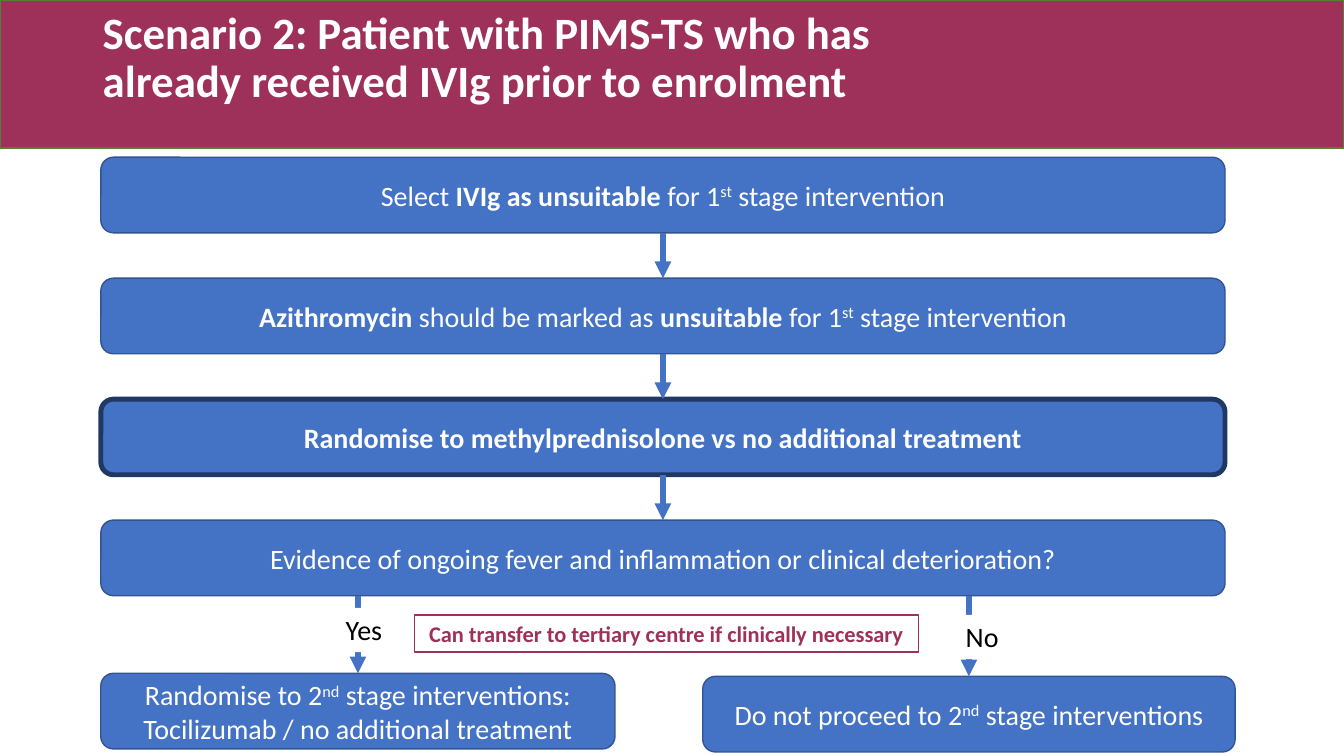
from dataclasses import dataclass
from typing import NamedTuple

from lxml.etree import SubElement
from pptx import Presentation
from pptx.dml.color import RGBColor
from pptx.enum.shapes import MSO_CONNECTOR, MSO_SHAPE
from pptx.enum.text import MSO_ANCHOR, PP_ALIGN
from pptx.oxml.ns import qn
from pptx.util import Inches, Pt

WHITE = RGBColor(0xFF, 0xFF, 0xFF)
BLACK = RGBColor(0x00, 0x00, 0x00)
MAROON = RGBColor(0x9E, 0x31, 0x59)
GREEN = RGBColor(0x53, 0x80, 0x35)
BLUE = RGBColor(0x44, 0x72, 0xC4)
BLUE_EDGE = RGBColor(0x32, 0x54, 0x91)
NAVY = RGBColor(0x20, 0x38, 0x64)

FONT = "Calibri"
STEP_LEFT, STEP_WIDTH, STEP_HEIGHT = 1, 11.15, 0.75
STEP_TOP, STEP_PITCH = 1.56, 1.2
BOTTOM_SIDE, TOP_SIDE = 2, 0


class Span(NamedTuple):
    text: str
    bold: bool = False
    superscript: bool = False


Paragraphs = list[list[Span]]


@dataclass
class Step:
    paragraphs: Paragraphs
    edge: RGBColor = BLUE_EDGE
    edge_width: float = 1


@dataclass
class Outcome:
    answer: str
    answer_left: float
    answer_top: float
    left: float
    top: float
    width: float
    paragraphs: Paragraphs


FIRST_STAGE = [Span("st", superscript=True), Span(" stage intervention")]

STEPS = [
    Step([[Span("Select "), Span("IVIg as unsuitable ", bold=True), Span("for 1"), *FIRST_STAGE]]),
    Step([[Span("Azithromycin", bold=True), Span(" should be marked as "),
           Span("unsuitable", bold=True), Span(" for 1"), *FIRST_STAGE]]),
    Step([[Span("Randomise to methylprednisolone vs no additional treatment", bold=True)]],
         NAVY, 3.5),
    Step([[Span("Evidence of ongoing fever and inflammation or clinical deterioration?")]]),
]

OUTCOMES = [
    Outcome("Yes", 3.33, 6.03, 1, 6.68, 5.1,
            [[Span("Randomise to 2"), Span("nd", superscript=True), Span(" stage interventions:")],
             [Span("Tocilizumab / no additional treatment")]]),
    Outcome("No", 9.48, 6.1, 6.97, 6.71, 5.28,
            [[Span("Do not proceed to 2"), Span("nd", superscript=True),
              Span(" stage interventions")]]),
]


def write(shape, paragraphs: Paragraphs, *, size: float = 20, color: RGBColor = WHITE,
          align: PP_ALIGN = PP_ALIGN.CENTER, anchor: MSO_ANCHOR = MSO_ANCHOR.MIDDLE,
          line_spacing: float = 1.0) -> None:
    frame = shape.text_frame
    frame.word_wrap = True
    frame.vertical_anchor = anchor
    for index, spans in enumerate(paragraphs):
        paragraph = frame.add_paragraph() if index else frame.paragraphs[0]
        paragraph.alignment = align
        paragraph.line_spacing = line_spacing
        for span in spans:
            run = paragraph.add_run()
            run.text = span.text
            run.font.name = FONT
            run.font.size = Pt(size)
            run.font.bold = span.bold
            run.font.color.rgb = color
            if span.superscript:
                run._r.get_or_add_rPr().set("baseline", "30000")


def add_box(slide, left: float, top: float, width: float, height: float, *,
            kind: MSO_SHAPE = MSO_SHAPE.RECTANGLE, fill: RGBColor | None = None,
            edge: RGBColor | None = None, edge_width: float = 1):
    box = slide.shapes.add_shape(kind, Inches(left), Inches(top), Inches(width), Inches(height))
    box.shadow.inherit = False
    if fill is None:
        box.fill.background()
    else:
        box.fill.solid()
        box.fill.fore_color.rgb = fill
    if edge is None:
        box.line.fill.background()
    else:
        box.line.color.rgb = edge
        box.line.width = Pt(edge_width)
    return box


def add_flow_box(slide, left: float, top: float, width: float, paragraphs: Paragraphs,
                 edge: RGBColor = BLUE_EDGE, edge_width: float = 1):
    box = add_box(slide, left, top, width, STEP_HEIGHT, kind=MSO_SHAPE.ROUNDED_RECTANGLE,
                  fill=BLUE, edge=edge, edge_width=edge_width)
    write(box, paragraphs)
    return box


def add_arrow_down(slide, source, target):
    """Draw a vertical arrow from the bottom of source to the top centre of target."""
    x = target.left + target.width // 2
    arrow = slide.shapes.add_connector(
        MSO_CONNECTOR.STRAIGHT, x, source.top + source.height, x, target.top)
    if source.left + source.width // 2 == x:
        arrow.begin_connect(source, BOTTOM_SIDE)
    arrow.end_connect(target, TOP_SIDE)
    arrow.line.color.rgb = BLUE
    arrow.line.width = Pt(4)
    SubElement(arrow.line._get_or_add_ln(), qn("a:tailEnd"), type="triangle")
    SubElement(arrow._element.spPr, qn("a:effectLst"))


def main() -> None:
    presentation = Presentation()
    presentation.slide_width = Inches(13.33)
    presentation.slide_height = Inches(7.5)
    slide = presentation.slides.add_slide(presentation.slide_layouts[6])

    # Title band
    add_box(slide, 0, 0, 13.33, 1.47, fill=MAROON, edge=GREEN)
    title = slide.shapes.add_textbox(Inches(0.92), Inches(0.02), Inches(8.91), Inches(1.13))
    heading = "Scenario 2: Patient with PIMS-TS who has already received IVIg prior to enrolment"
    write(title, [[Span(heading, bold=True)]], size=32, align=PP_ALIGN.LEFT, line_spacing=0.9)

    # Main steps, each joined to the next
    steps = [
        add_flow_box(slide, STEP_LEFT, STEP_TOP + row * STEP_PITCH, STEP_WIDTH,
                     step.paragraphs, step.edge, step.edge_width)
        for row, step in enumerate(STEPS)
    ]
    for source, target in zip(steps, steps[1:]):
        add_arrow_down(slide, source, target)

    # Yes and No branches, with the answer over each arrow
    for outcome in OUTCOMES:
        result = add_flow_box(slide, outcome.left, outcome.top, outcome.width, outcome.paragraphs)
        add_arrow_down(slide, steps[-1], result)
        answer = add_box(slide, outcome.answer_left, outcome.answer_top, 0.67, 0.44, fill=WHITE)
        write(answer, [[Span(outcome.answer)]], color=BLACK, align=PP_ALIGN.LEFT,
              anchor=MSO_ANCHOR.TOP)

    # Transfer note
    transfer_note = add_box(slide, 4.11, 6.1, 5, 0.37, edge=MAROON)
    write(transfer_note,
          [[Span("Can transfer to tertiary centre if clinically necessary", bold=True)]],
          size=16, color=MAROON, anchor=MSO_ANCHOR.TOP)

    presentation.save("out.pptx")


if __name__ == "__main__":
    main()
